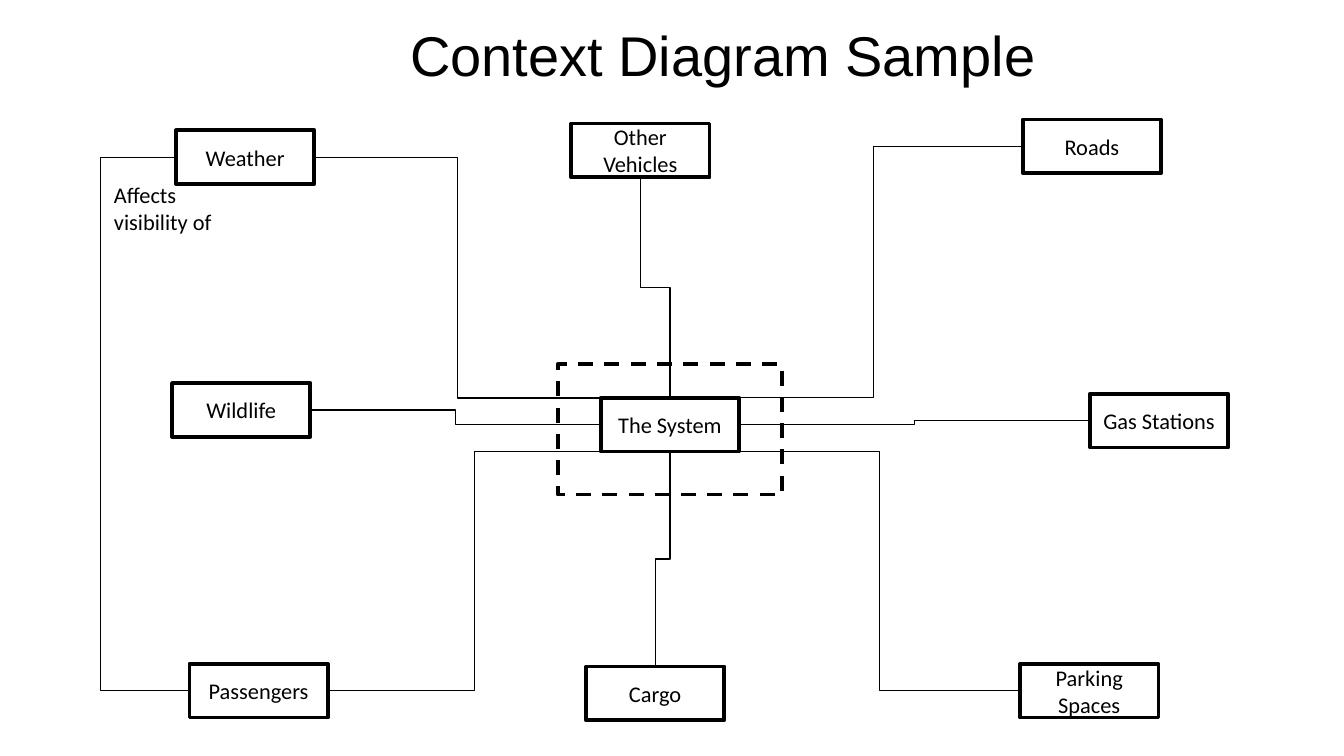
from lxml.etree import SubElement
from pptx import Presentation
from pptx.dml.color import RGBColor
from pptx.enum.dml import MSO_LINE
from pptx.enum.shapes import MSO_CONNECTOR, MSO_SHAPE
from pptx.enum.text import MSO_ANCHOR, MSO_AUTO_SIZE, PP_ALIGN
from pptx.oxml.ns import qn
from pptx.util import Inches, Pt

COLORS = {"ink": "000000", "paper": "FFFFFF"}
BOX_W, BOX_H = 1.03, 0.4

# Top left corner of each entity, in inches
ENTITIES = {
    "The System": (4.47, 2.96),
    "Roads": (7.61, 0.89),
    "Parking Spaces": (7.59, 4.94),
    "Weather": (1.31, 0.97),
    "Wildlife": (1.28, 2.85),
    "Passengers": (1.41, 4.94),
    "Cargo": (4.36, 4.96),
    "Other Vehicles": (4.25, 0.92),
    "Gas Stations": (8.11, 2.93),
}

# Connection sites, and their places as fractions of the box
TOP, LEFT, BOTTOM, RIGHT = range(4)
SITES = {TOP: (0.5, 0), LEFT: (0, 0.5), BOTTOM: (0.5, 1), RIGHT: (1, 0.5)}

# Start, its site, end, its site (or a free place on the outline)
RELATIONS = [
    ("Other Vehicles", BOTTOM, "The System", TOP),
    ("Roads", LEFT, "The System", (0.89, 0)),
    ("The System", RIGHT, "Gas Stations", LEFT),
    ("The System", BOTTOM, "Cargo", TOP),
    ("The System", (1, 1), "Parking Spaces", LEFT),
    ("The System", LEFT, "Wildlife", RIGHT),
    ("Weather", RIGHT, "The System", (0, 0)),
    ("Passengers", RIGHT, "The System", (0.15, 1)),
]
VISIBILITY_BEND_X = 0.75


def rgb(name):
    return RGBColor.from_string(COLORS[name])


def write(shape, text, size=12, font="Calibri", align=PP_ALIGN.CENTER,
          anchor=MSO_ANCHOR.MIDDLE, inset=0.05):
    frame = shape.text_frame
    frame.word_wrap = True
    frame.auto_size = MSO_AUTO_SIZE.NONE
    frame.vertical_anchor = anchor
    frame.margin_left = frame.margin_right = Inches(0.1)
    frame.margin_top = frame.margin_bottom = Inches(inset)
    paragraph = frame.paragraphs[0]
    paragraph.alignment = align
    run = paragraph.add_run()
    run.text = text
    run.font.size = Pt(size)
    run.font.name = font
    run.font.color.rgb = rgb("ink")


def add_box(slide, left, top, width=BOX_W, height=BOX_H, dash=None):
    box = slide.shapes.add_shape(MSO_SHAPE.RECTANGLE, Inches(left), Inches(top),
                                 Inches(width), Inches(height))
    box.shadow.inherit = False
    box.fill.background()
    box.line.color.rgb = rgb("ink")
    box.line.width = Pt(2)
    if dash:
        box.line.dash_style = dash
    return box


def place_on(entity, site):
    left, top = ENTITIES[entity]
    across, down = SITES[site] if site in SITES else site
    return left + across * BOX_W, top + down * BOX_H


def add_elbow(slide, start, end, vertical=False, bend=None):
    """Draw an elbow; a vertical one runs downwards, as a rotated flat one."""
    (x1, y1), (x2, y2) = start, end
    rotation = 0
    if vertical:
        rotation = 270 if x2 > x1 else 90
        mid_x, mid_y = (x1 + x2) / 2, (y1 + y2) / 2
        half_w, half_h = (y2 - y1) / 2, abs(x2 - x1) / 2
        if rotation == 270:
            half_w = -half_w
        x1, x2 = mid_x - half_w, mid_x + half_w
        y1, y2 = mid_y - half_h, mid_y + half_h
    elbow = slide.shapes.add_connector(MSO_CONNECTOR.ELBOW, Inches(x1), Inches(y1),
                                       Inches(x2), Inches(y2))
    elbow.rotation = rotation
    elbow.line.color.rgb = rgb("ink")
    elbow.line.width = Pt(0.75)
    properties = elbow.element.spPr
    SubElement(properties, qn("a:effectLst"))
    if bend is not None:
        guides = properties.find(qn("a:prstGeom")).get_or_add_avLst()
        share = round((bend - x1) / (x2 - x1) * 100000)
        SubElement(guides, qn("a:gd"), name="adj1", fmla=f"val {share}")


def main():
    prs = Presentation()
    prs.slide_width = Inches(10)
    prs.slide_height = Inches(10 * 9 / 16)
    slide = prs.slides.add_slide(prs.slide_layouts[5])
    slide.background.fill.solid()
    slide.background.fill.fore_color.rgb = rgb("paper")

    # Title
    title = slide.shapes.title
    title.left, title.top = Inches(2.13), Inches(0.1)
    title.width, title.height = Inches(6.5), Inches(0.31)
    write(title, "Context Diagram Sample", size=30, font="Arial", anchor=MSO_ANCHOR.TOP)

    # Entities and the system boundary
    for entity, corner in ENTITIES.items():
        write(add_box(slide, *corner), entity)
    add_box(slide, 4.15, 2.71, 1.67, 0.97, dash=MSO_LINE.DASH)

    # Relations
    for source, source_site, target, target_site in RELATIONS:
        add_elbow(slide, place_on(source, source_site), place_on(target, target_site),
                  vertical=source_site == BOTTOM)

    # Weather affects passengers
    add_elbow(slide, place_on("Weather", LEFT), place_on("Passengers", LEFT),
              bend=VISIBILITY_BEND_X)
    effect = slide.shapes.add_textbox(Inches(VISIBILITY_BEND_X), Inches(1.09),
                                      Inches(1.03), Inches(0.91))
    write(effect, "Affects visibility of", align=PP_ALIGN.LEFT, inset=0.1)

    prs.save("out.pptx")


if __name__ == "__main__":
    main()
